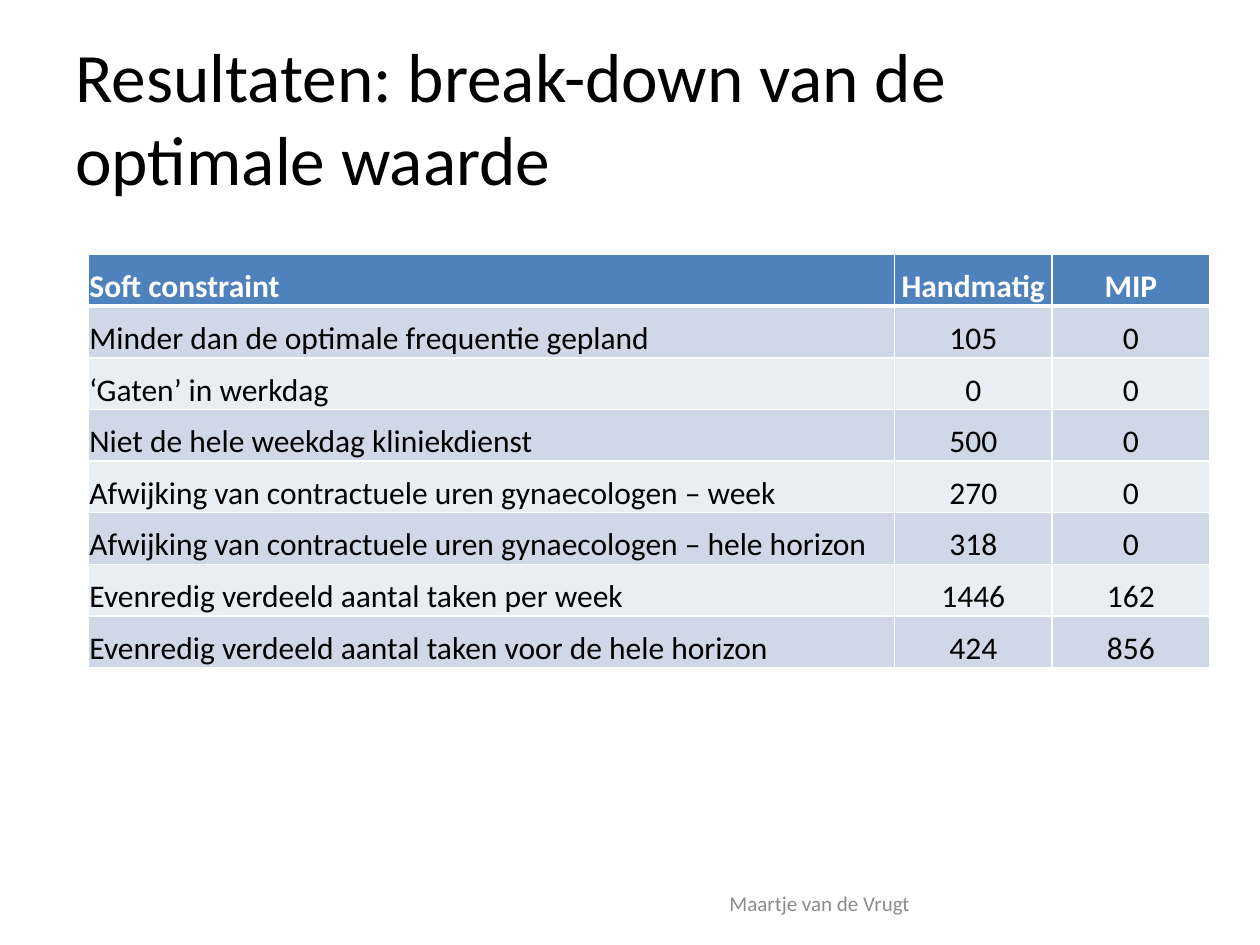
from lxml import etree
from pptx import Presentation
from pptx.dml.color import RGBColor
from pptx.enum.text import MSO_ANCHOR, PP_ALIGN
from pptx.oxml.ns import qn
from pptx.util import Inches, Pt

LEFT, CENTER = PP_ALIGN.LEFT, PP_ALIGN.CENTER
MIDDLE, BOTTOM = MSO_ANCHOR.MIDDLE, MSO_ANCHOR.BOTTOM
BLACK = RGBColor(0x00, 0x00, 0x00)
WHITE = RGBColor(0xFF, 0xFF, 0xFF)
GRAY = RGBColor(0x8C, 0x8C, 0x8C)
BLUE = RGBColor(0x4F, 0x81, 0xBD)
BANDS = (RGBColor(0xE9, 0xED, 0xF4), RGBColor(0xD0, 0xD8, 0xE8))

COLUMN_WIDTHS = (6.4, 1.25, 1.25)
ROW_HEIGHT = 0.41
ROWS = (
    ("Soft constraint", "Handmatig", "MIP"),
    ("Minder dan de optimale frequentie gepland", "105", "0"),
    ("‘Gaten’ in werkdag", "0", "0"),
    ("Niet de hele weekdag kliniekdienst", "500", "0"),
    ("Afwijking van contractuele uren gynaecologen – week", "270", "0"),
    ("Afwijking van contractuele uren gynaecologen – hele horizon", "318", "0"),
    ("Evenredig verdeeld aantal taken per week", "1446", "162"),
    ("Evenredig verdeeld aantal taken voor de hele horizon", "424", "856"),
)


class SlideBuilder:
    font_name = "Calibri"

    def __init__(self, slide):
        self.slide = slide

    def add_run(self, paragraph, text, size, color, alignment, bold=False):
        paragraph.alignment = alignment
        run = paragraph.add_run()
        run.text = text
        run.font.name = self.font_name
        run.font.size = Pt(size)
        run.font.bold = bold
        run.font.color.rgb = color

    def add_text(self, text, left, top, width, height, size, color, alignment=LEFT):
        shape = self.slide.shapes.add_textbox(
            Inches(left), Inches(top), Inches(width), Inches(height))
        frame = shape.text_frame
        frame.word_wrap = True
        frame.vertical_anchor = MIDDLE
        self.add_run(frame.paragraphs[0], text, size, color, alignment)

    def add_borders(self, cell, bottom_width):
        properties = cell._tc.get_or_add_tcPr()
        widths = {"a:lnL": 1, "a:lnR": 1, "a:lnT": 1, "a:lnB": bottom_width}
        for tag, width in widths.items():
            line = etree.SubElement(properties, qn(tag), w=str(Pt(width)))
            fill = etree.SubElement(line, qn("a:solidFill"))
            etree.SubElement(fill, qn("a:srgbClr"), val=str(WHITE))

    def fill_cell(self, cell, text, row_index, column_index):
        header = row_index == 0
        cell.vertical_anchor = BOTTOM
        cell.margin_left = cell.margin_right = cell.margin_top = Inches(0.01)
        cell.margin_bottom = 0
        self.add_borders(cell, 3 if header else 1)
        cell.fill.solid()
        cell.fill.fore_color.rgb = BLUE if header else BANDS[row_index % 2]
        self.add_run(cell.text_frame.paragraphs[0], text, 18,
                     WHITE if header else BLACK,
                     CENTER if column_index else LEFT, header)

    def add_table(self, rows, left, top):
        table = self.slide.shapes.add_table(
            len(rows), len(COLUMN_WIDTHS), Inches(left), Inches(top),
            Inches(sum(COLUMN_WIDTHS)), Inches(ROW_HEIGHT * len(rows))).table
        for column, width in zip(table.columns, COLUMN_WIDTHS):
            column.width = Inches(width)
        for row_index, values in enumerate(rows):
            table.rows[row_index].height = Inches(ROW_HEIGHT)
            for column_index, text in enumerate(values):
                self.fill_cell(table.cell(row_index, column_index), text,
                               row_index, column_index)


def main():
    presentation = Presentation()
    presentation.slide_width = Inches(10)
    presentation.slide_height = Inches(7.5)
    builder = SlideBuilder(presentation.slides.add_slide(presentation.slide_layouts[6]))
    builder.add_text("Resultaten: break-down van de optimale waarde",
                     0.5, 0.3, 9, 1.25, 39.6, BLACK)
    builder.add_text("Maartje van de Vrugt", 4.92, 6.97, 3.17, 0.4, 12, GRAY, CENTER)
    builder.add_table(ROWS, 0.7, 2.02)
    presentation.save("out.pptx")


if __name__ == "__main__":
    main()
